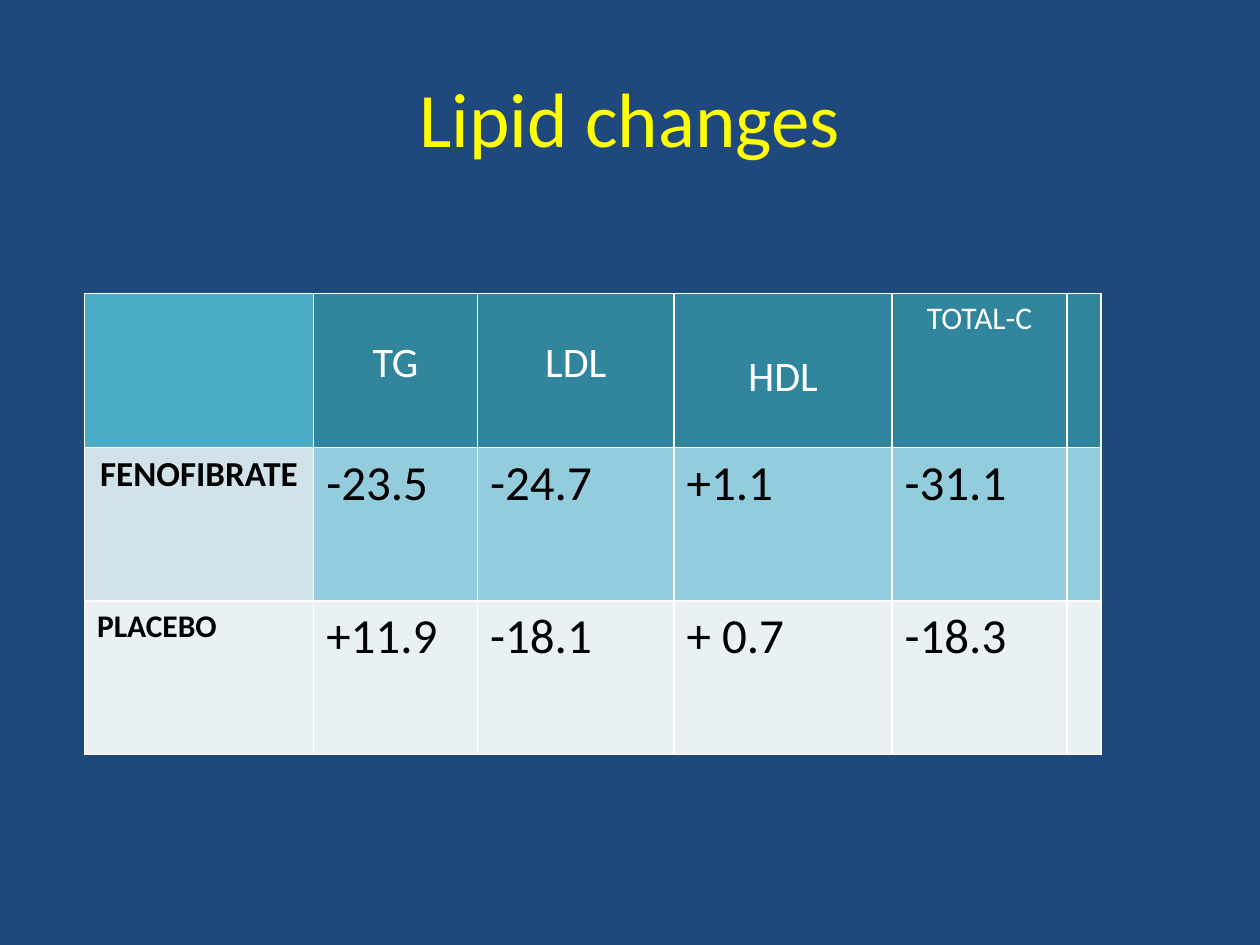
"""Build the lipid changes slide: a title above a table of results by treatment."""
import dataclasses

import pptx
import pptx.dml.color
import pptx.enum.text
import pptx.oxml
import pptx.oxml.ns
import pptx.util

Inches = pptx.util.Inches
Align = pptx.enum.text.PP_ALIGN
Anchor = pptx.enum.text.MSO_ANCHOR


@dataclasses.dataclass(frozen=True)
class Theme:
    font: str = "Calibri"
    background: str = "1F497D"
    title: str = "FFFF00"
    light: str = "FFFFFF"
    dark: str = "000000"
    corner: str = "4BACC6"
    header: str = "31859C"
    treatment: str = "D0E3EA"
    highlight: str = "93CDDD"
    placebo: str = "E9F1F5"
    title_size: int = 44
    value_size: int = 28
    header_size: int = 24
    label_size: int = 20
    small_size: int = 18
    border_width: int = 1


THEME = Theme()
COLUMN_WIDTHS = [1.82, 1.3, 1.56, 1.73, 1.39, 0.27]
ROW_HEIGHT = 1.22
HEADERS = [
    ("TG", THEME.header_size, 0.35),
    ("LDL", THEME.header_size, 0.35),
    ("HDL", THEME.header_size, 0.46),
    ("TOTAL-C", THEME.small_size, 0.05),
]
TREATMENTS = [
    ("FENOFIBRATE", THEME.label_size, Align.CENTER, THEME.treatment, THEME.highlight,
     ["-23.5", "-24.7", "+1.1", "-31.1"]),
    ("PLACEBO", THEME.small_size, Align.LEFT, THEME.placebo, THEME.placebo,
     ["+11.9", "-18.1", "+ 0.7", "-18.3"]),
]


def rgb(value):
    return pptx.dml.color.RGBColor.from_string(value)


def write_text(text_frame, text, *, size, color, bold=False, align=Align.LEFT):
    paragraph = text_frame.paragraphs[0]
    paragraph.alignment = align
    run = paragraph.add_run()
    run.text = text
    run.font.name = THEME.font
    run.font.size = pptx.util.Pt(size)
    run.font.bold = bold
    run.font.color.rgb = rgb(color)


def set_borders(cell, color, width):
    properties = cell._tc.get_or_add_tcPr()
    for position, side in enumerate(("lnL", "lnR", "lnT", "lnB")):
        line = pptx.oxml.parse_xml(
            f'<a:{side} {pptx.oxml.ns.nsdecls("a")} w="{pptx.util.Pt(width)}">'
            f'<a:solidFill><a:srgbClr val="{color}"/></a:solidFill></a:{side}>'
        )
        properties.insert(position, line)


def style_cell(cell, fill):
    cell.fill.solid()
    cell.fill.fore_color.rgb = rgb(fill)
    set_borders(cell, THEME.light, THEME.border_width)


def add_title(slide, text):
    title = slide.shapes.title
    title.left, title.top = Inches(0.5), Inches(0.3)
    title.width, title.height = Inches(9), Inches(1.25)
    title.text_frame.vertical_anchor = Anchor.MIDDLE
    write_text(title.text_frame, text, size=THEME.title_size,
               color=THEME.title, align=Align.CENTER)


def add_results_table(slide):
    row_count = len(TREATMENTS) + 1
    table = slide.shapes.add_table(
        row_count, len(COLUMN_WIDTHS), Inches(0.67), Inches(2.33),
        Inches(sum(COLUMN_WIDTHS)), Inches(ROW_HEIGHT * row_count),
    ).table
    for column, width in zip(table.columns, COLUMN_WIDTHS):
        column.width = Inches(width)
    for row in table.rows:
        row.height = Inches(ROW_HEIGHT)
    fill_header(table)
    for row_index, treatment in enumerate(TREATMENTS, start=1):
        fill_treatment(table, row_index, *treatment)


def fill_header(table):
    for index in range(len(COLUMN_WIDTHS)):
        style_cell(table.cell(0, index), THEME.header if index else THEME.corner)
    for index, (text, size, margin) in enumerate(HEADERS, start=1):
        cell = table.cell(0, index)
        cell.margin_top = Inches(margin)
        write_text(cell.text_frame, text, size=size, color=THEME.light, align=Align.CENTER)


def fill_treatment(table, row_index, name, size, align, label_fill, value_fill, values):
    for index in range(len(COLUMN_WIDTHS)):
        style_cell(table.cell(row_index, index), value_fill if index else label_fill)
    write_text(table.cell(row_index, 0).text_frame, name, size=size,
               color=THEME.dark, bold=True, align=align)
    for index, value in enumerate(values, start=1):
        write_text(table.cell(row_index, index).text_frame, value,
                   size=THEME.value_size, color=THEME.dark)


def main():
    presentation = pptx.Presentation()
    presentation.slide_width, presentation.slide_height = Inches(10), Inches(7.5)
    slide = presentation.slides.add_slide(presentation.slide_layouts[5])
    slide.background.fill.solid()
    slide.background.fill.fore_color.rgb = rgb(THEME.background)
    add_title(slide, "Lipid changes")
    add_results_table(slide)
    presentation.save("out.pptx")


if __name__ == "__main__":
    main()
